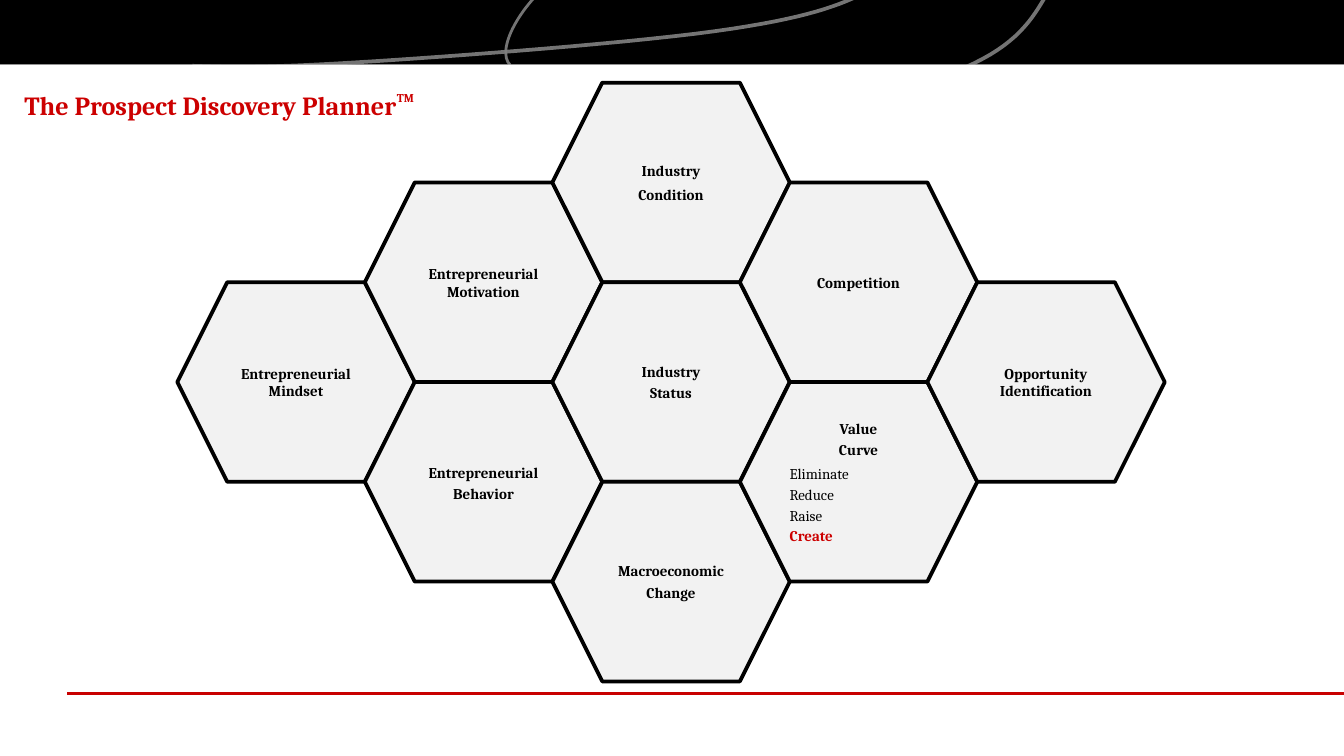
from lxml import etree
from pptx import Presentation
from pptx.dml.color import RGBColor
from pptx.enum import shapes, text
from pptx.oxml import ns
from pptx.util import Pt

BLACK = RGBColor(0, 0, 0)
WHITE = RGBColor(255, 255, 255)
PALE = RGBColor(0xF2, 0xF2, 0xF2)
GRAY = RGBColor(0x80, 0x80, 0x80)
RED = RGBColor(0xCC, 0, 0)
RULE_RED = RGBColor(0xC8, 0, 0)
FONT = "Cambria"
W, H = 720, 405

# Cubic curves in the banner: a start point, then three points per segment
SWEEPS = [
    [(103, 35.3), (122.4, 36), (141.8, 36.4), (190, 33.5), (238.3, 30.6),
     (346.3, 22.6), (392.4, 15.4), (438.5, 8.4), (452.9, 1.4), (467.3, -5.8)],
    [(367.2, 70.6), (377.3, 72), (388.1, 74.2), (413.3, 67.7), (439.2, 61.2),
     (497.5, 46.1), (522, 33.8), (547.2, 21.6), (554.4, 7.9), (562.3, -5.8)],
]

# Honeycomb cells: column, half-row, lines as (text, line spacing)
CELLS = [
    (0, 2, [("Entrepreneurial Mindset", 1)]),
    (1, 1, [("Entrepreneurial Motivation", 1)]),
    (1, 3, [("Entrepreneurial Behavior", 1.15)]),
    (2, 0, [("Industry", 1), ("Condition", 1.15)]),
    (2, 2, [("Industry", 1), ("Status", 1)]),
    (2, 4, [("Macroeconomic", 1), ("Change", 1)]),
    (3, 1, [("Competition", 1)]),
    (3, 3, [("Value", 1), ("Curve", 1)]),
    (4, 2, [("Opportunity Identification", 1)]),
]
ACTIONS = {(3, 3): ["Eliminate", "Reduce", "Raise", "Create"]}


def add_block(s, x, y, w, h, color):
    sp = s.shapes.add_shape(shapes.MSO_SHAPE.RECTANGLE, Pt(x), Pt(y), Pt(w), Pt(h))
    sp.shadow.inherit = False
    sp.fill.solid()
    sp.fill.fore_color.rgb = color
    sp.line.fill.background()


def style_stroke(sp, width):
    sp.shadow.inherit = False
    sp.fill.background()
    sp.line.color.rgb = GRAY
    sp.line.width = Pt(width)
    color = sp.line._ln.find(".//" + ns.qn("a:srgbClr"))
    etree.SubElement(color, ns.qn("a:alpha"), val="91000")


def curve_points(pts, steps=16):
    for i in range(0, len(pts) - 1, 3):
        seg = pts[i:i + 4]
        for k in range(1, steps + 1):
            t = k / steps
            weights = ((1 - t) ** 3, 3 * t * (1 - t) ** 2, 3 * t * t * (1 - t), t ** 3)
            yield tuple(Pt(sum(f * p[axis] for f, p in zip(weights, seg)))
                        for axis in (0, 1))


def add_banner(s, x, y, w, h):
    add_block(s, x, y, w, h, BLACK)
    for pts in SWEEPS:
        fb = s.shapes.build_freeform(Pt(x + pts[0][0]), Pt(y + pts[0][1]))
        fb.add_line_segments([(px + Pt(x), py + Pt(y)) for px, py in curve_points(pts)],
                             close=False)
        style_stroke(fb.convert_to_shape(), 2)
    arc = s.shapes.add_shape(shapes.MSO_SHAPE.ARC, Pt(x + 283.7), Pt(y - 30.2),
                             Pt(31.7), Pt(75.6))
    arc.rotation = 224
    style_stroke(arc, 1.5)
    # White strip hides the ends of the curves
    add_block(s, x, y + h, w, 43.2, WHITE)


def add_rule(s, x, y, w):
    line = s.shapes.add_connector(shapes.MSO_CONNECTOR.STRAIGHT,
                                  Pt(x), Pt(y), Pt(x + w), Pt(y))
    line.line.color.rgb = RULE_RED
    line.line.width = Pt(1.5)
    etree.SubElement(line._element.spPr, ns.qn("a:effectLst"))


def add_title(s, x, y, w, h):
    title = s.shapes.title
    title.left, title.top, title.width, title.height = Pt(x), Pt(y), Pt(w), Pt(h)
    tf = title.text_frame
    tf.word_wrap = True
    tf.auto_size = text.MSO_AUTO_SIZE.NONE
    tf.vertical_anchor = text.MSO_ANCHOR.TOP
    p = tf.paragraphs[0]
    p.alignment = text.PP_ALIGN.LEFT
    for words, size in (("The Prospect Discovery Planner", 14), ("TM", 11)):
        r = p.add_run()
        r.text = words
        r.font.name, r.font.size, r.font.bold = FONT, Pt(size), True
        r.font.color.rgb = RED
    r.font._element.set("baseline", "64000")
    # Bring the title in front of the white strip
    title.element.getparent().append(title.element)


def add_line(tf, words, spacing, align, after, bold=True, color=BLACK):
    p = tf.paragraphs[0] if not tf.text else tf.add_paragraph()
    p.text = words
    p.alignment, p.line_spacing, p.space_after = align, float(spacing), Pt(after)
    p.font.name, p.font.size, p.font.bold = FONT, Pt(8), bold
    p.font.color.rgb = color


def add_cell(s, x, y, w, h, lines, actions):
    sp = s.shapes.add_shape(shapes.MSO_SHAPE.HEXAGON, Pt(x), Pt(y), Pt(w), Pt(h))
    sp.shadow.inherit = False
    sp.fill.solid()
    sp.fill.fore_color.rgb = PALE
    sp.line.color.rgb = BLACK
    sp.line.width = Pt(2)
    tf = sp.text_frame
    tf.word_wrap = True
    tf.vertical_anchor = text.MSO_ANCHOR.MIDDLE
    tf.margin_left = tf.margin_right = tf.margin_top = tf.margin_bottom = Pt(7.2)
    for words, spacing in lines:
        add_line(tf, words, spacing, text.PP_ALIGN.CENTER, 2)
    for words in actions:
        chosen = words == "Create"
        add_line(tf, words, 1.15, text.PP_ALIGN.LEFT, 0, chosen, RED if chosen else BLACK)


def add_honeycomb(s, x, y, w, h):
    # Five columns and three full rows; each column overlaps by one slanted side
    cell_h = h / 3
    slant = cell_h / 4
    cell_w = (w + 4 * slant) / 5
    for col, row, lines in CELLS:
        add_cell(s, x + col * (cell_w - slant), y + row * cell_h / 2, cell_w, cell_h,
                 lines, ACTIONS.get((col, row), []))


def main():
    prs = Presentation()
    prs.slide_width, prs.slide_height = Pt(W), Pt(H)
    s = prs.slides.add_slide(prs.slide_layouts[5])
    add_rule(s, 36, 371.7, W - 36)
    add_banner(s, 0, 0, W, 34.6)
    add_title(s, 5.8, 44.4, 708, 24.5)
    add_honeycomb(s, 95, 44.3, 529, 320.8)
    prs.save("out.pptx")


if __name__ == "__main__":
    main()
